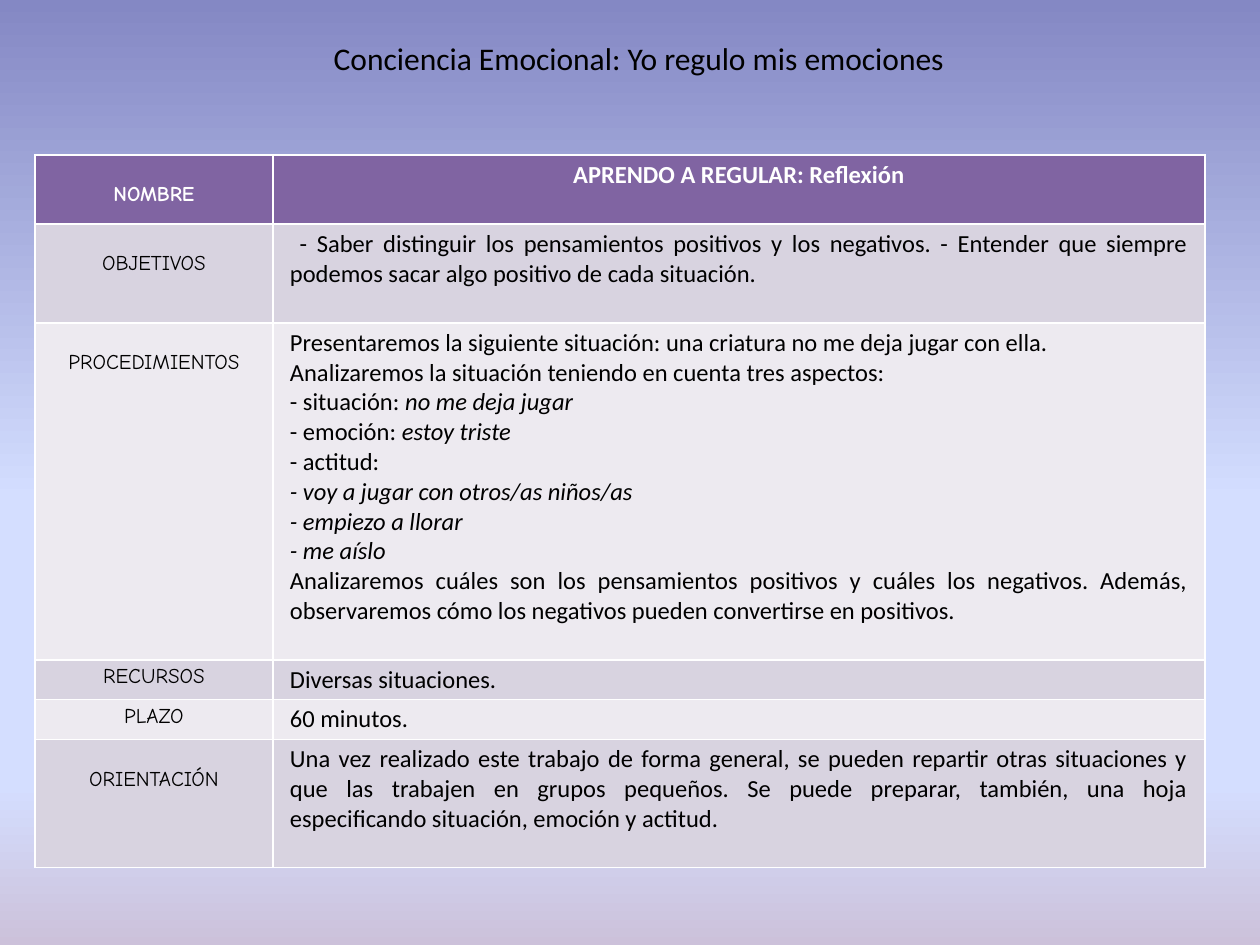
"""Build a slide with an activity sheet on regulating emotions."""
from copy import deepcopy

from pptx import Presentation
from pptx.dml.color import RGBColor
from pptx.enum.text import MSO_ANCHOR, PP_ALIGN
from pptx.util import Pt

PX = 914400 // 126
MID, TOP = MSO_ANCHOR.MIDDLE, MSO_ANCHOR.TOP
CENTER, JUSTIFY = PP_ALIGN.CENTER, PP_ALIGN.JUSTIFY
BLACK = RGBColor(0, 0, 0)
WHITE = RGBColor(255, 255, 255)
PURPLE = RGBColor(0x80, 0x64, 0xA2)
BANDS = RGBColor(0xED, 0xEA, 0xF0), RGBColor(0xD8, 0xD3, 0xE0)
SKY = [
    (0, RGBColor(0x84, 0x88, 0xC4)),
    (0.53, RGBColor(0xD4, 0xDE, 0xFF)),
    (0.83, RGBColor(0xD4, 0xDE, 0xFF)),
    (1, RGBColor(0xCC, 0xC1, 0xDA)),
]

TITLE = "Conciencia Emocional: Yo regulo mis emociones"
# Each row: label, height, label drop, paragraphs of (plain, italic) text
ROWS = [
    ("NOMBRE", 69, 23, [("APRENDO A REGULAR: Reflexión", "")]),
    ("OBJETIVOS", 99, 23, [
        (" - Saber distinguir los pensamientos positivos y los negativos. "
         "- Entender que siempre podemos sacar algo positivo de cada "
         "situación.", "")]),
    ("PROCEDIMIENTOS", 337, 23, [
        ("Presentaremos la siguiente situación: una criatura no me deja "
         "jugar con ella.", ""),
        ("Analizaremos la situación teniendo en cuenta tres aspectos:", ""),
        ("- situación: ", "no me deja jugar"),
        ("- emoción: ", "estoy triste"),
        ("- actitud:", ""),
        ("", "- voy a jugar con otros/as niños/as"),
        ("", "- empiezo a llorar"),
        ("", "- me aíslo"),
        ("Analizaremos cuáles son los pensamientos positivos y cuáles los "
         "negativos. Además, observaremos cómo los negativos pueden "
         "convertirse en positivos.", "")]),
    ("RECURSOS", 39, 0, [("Diversas situaciones.", "")]),
    ("PLAZO", 40, 0, [("60 minutos.", "")]),
    ("ORIENTACIÓN", 128, 23, [
        ("Una vez realizado este trabajo de forma general, se pueden "
         "repartir otras situaciones y que las trabajen en grupos pequeños. "
         "Se puede preparar, también, una hoja especificando situación, "
         "emoción y actitud.", "")]),
]
COLS = 238, 932
LEFT, HEAD = 35, 155
LABEL = {"name": "Comic Neue", "size": Pt(12)}
BODY = {"name": "Calibri", "size": Pt(14)}


def style(item, look):
    for key, value in look.items():
        setattr(item, key, value)


def write(frame, lines, align, look, color):
    for num, line in enumerate(lines):
        para = frame.add_paragraph() if num else frame.paragraphs[0]
        para.alignment = align
        for slant, text in enumerate(line):
            if text:
                run = para.add_run()
                run.text = text
                style(run.font, {**look, "italic": bool(slant)})
                run.font.color.rgb = color


def paint(slide):
    fill = slide.background.fill
    fill.gradient()
    fill.gradient_angle = 270
    stops = fill.gradient_stops
    first = stops[0]
    first.color.rgb = SKY[0][1]
    group = fill._fill._gradFill.gsLst
    while len(group) < len(SKY):
        group.append(deepcopy(group[0]))
    for stop, (place, color) in zip(fill.gradient_stops, SKY):
        stop.position = place
        stop.color.rgb = color


def add_title(slide):
    title = slide.shapes.title
    style(title, {"left": 292 * PX, "top": 33 * PX,
                  "width": 694 * PX, "height": 50 * PX})
    title.text_frame.vertical_anchor = MID
    write(title.text_frame, [(TITLE, "")], CENTER,
          {"name": "Calibri", "size": Pt(18)}, BLACK)


def add_sheet(slide):
    high = sum(row[1] for row in ROWS)
    table = slide.shapes.add_table(
        len(ROWS), len(COLS), LEFT * PX, HEAD * PX,
        sum(COLS) * PX, high * PX).table
    for col, width in zip(table.columns, COLS):
        col.width = width * PX
    for num, (label, height, drop, lines) in enumerate(ROWS):
        table.rows[num].height = height * PX
        ink = BLACK if num else WHITE
        back = BANDS[num % 2] if num else PURPLE
        align = JUSTIFY if num else CENTER
        parts = [([(label, "")], CENTER, LABEL, drop),
                 (lines, align, BODY, 0)]
        for col, (text, side, look, gap) in enumerate(parts):
            cell = table.cell(num, col)
            style(cell, {"margin_left": 17 * PX, "margin_right": 17 * PX,
                         "margin_top": (5 + gap) * PX,
                         "margin_bottom": 5 * PX, "vertical_anchor": TOP})
            cell.fill.solid()
            cell.fill.fore_color.rgb = back
            write(cell.text_frame, text, side,
                  {**look, "bold": num == 0}, ink)


def main():
    deck = Presentation()
    style(deck, {"slide_width": 1260 * PX, "slide_height": 945 * PX})
    slide = deck.slides.add_slide(deck.slide_layouts[5])
    paint(slide)
    add_title(slide)
    add_sheet(slide)
    deck.save("out.pptx")


if __name__ == "__main__":
    main()
